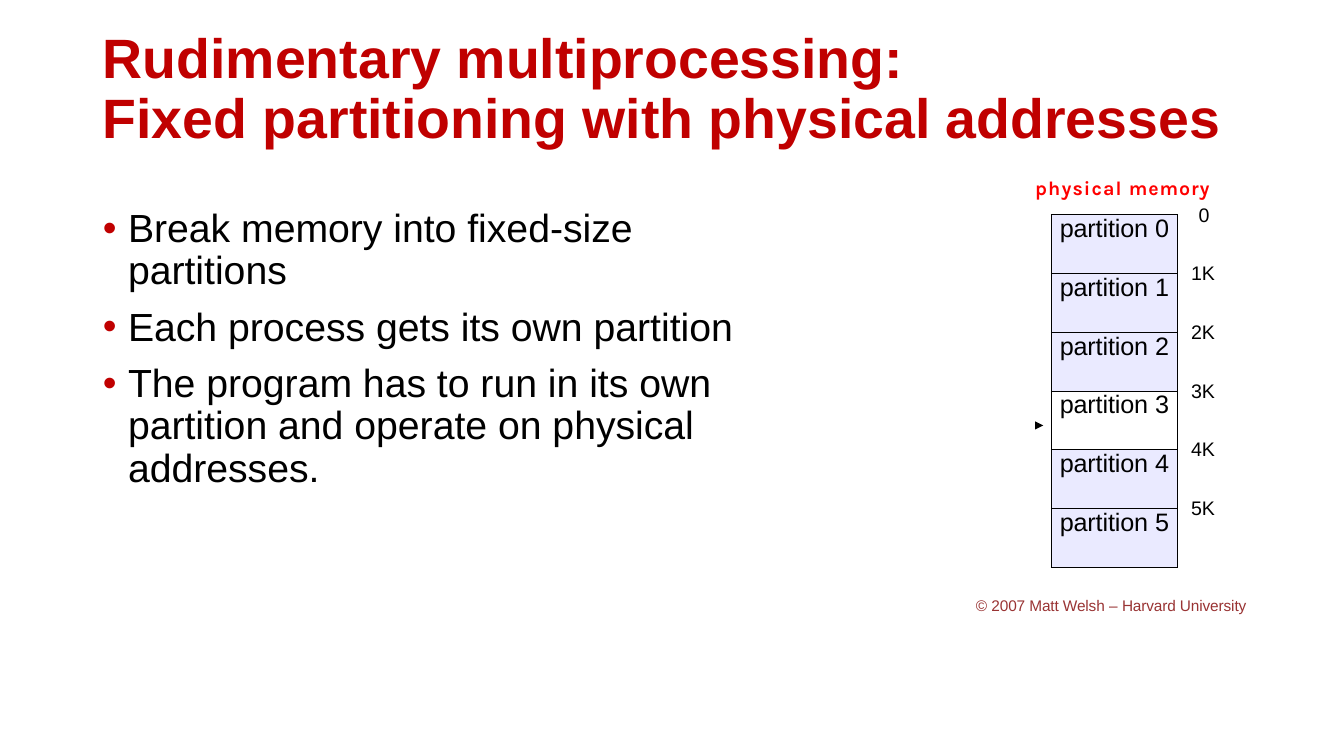
"""Build the slide on fixed partitioning of physical memory."""
from lxml import etree
from pptx import Presentation
from pptx.dml.color import RGBColor
from pptx.enum.text import MSO_ANCHOR, MSO_AUTO_SIZE, PP_ALIGN
from pptx.oxml.ns import qn
from pptx.util import Pt

LEFT, CENTER, RIGHT = PP_ALIGN.LEFT, PP_ALIGN.CENTER, PP_ALIGN.RIGHT
TOP, MIDDLE = MSO_ANCHOR.TOP, MSO_ANCHOR.MIDDLE
NO_FIT, GROW = MSO_AUTO_SIZE.NONE, MSO_AUTO_SIZE.SHAPE_TO_FIT_TEXT

COLORS = {"title": "C00000", "text": "000000", "heading": "FF0000",
          "credit": "993333", "partition": "EAEAFF"}

TITLE = "Rudimentary multiprocessing: \vFixed partitioning with physical addresses"
BULLETS = [
    "Break memory into fixed-size partitions",
    "Each process gets its own partition",
    "The program has to run in its own partition and operate on physical addresses.",
]
PARTITIONS = 6
RUNNING = 3
HEADING = [("physical ", 0.8), ("memory", 0.6)]
FIRST_ADDRESS = [("0", 0.1)]
CREDIT = [("© ", 0), ("2007 Matt Welsh ", -0.1), ("– ", 0), ("Harvard University", -0.1)]

TITLE_BOX = (66.24, 12.24, 858.24, 104.4)
BODY_BOX = (66.24, 145.44, 514.08, 362.88)
HEADING_BOX = (729.4, 125.3, 134.6, 37.4)
CREDIT_BOX = (697, 425.5, 198, 13.7)
TABLE_LEFT, TABLE_TOP, TABLE_WIDTH, ROW_HEIGHT = 751, 153.4, 90, 42
ADDRESS_LEFT, ADDRESS_RISE, ADDRESS_WIDTH, ADDRESS_HEIGHT = 850.8, 9, 22, 18
MARKER_LEFT, MARKER_TOP, MARKER_SIZE = 739.4, 301, 5.8

TITLE_FONT = {"name": "Arial", "size": Pt(39.6), "bold": True}
BODY_FONT = {"name": "Arial", "size": Pt(28)}
PARTITION_FONT = {"name": "Arial", "size": Pt(18)}
ADDRESS_FONT = {"name": "Arial", "size": Pt(14), "bold": False}
HEADING_FONT = {"name": "Karla", "size": Pt(14), "bold": True}
CREDIT_FONT = {"name": "Arial", "size": Pt(11)}
TITLE_FORMAT = {"alignment": LEFT, "line_spacing": 0.9}
BODY_FORMAT = {"alignment": LEFT, "line_spacing": 0.9, "space_before": Pt(10)}
NO_INSETS = {"margin_left": 0, "margin_right": 0, "margin_top": 0, "margin_bottom": 0}


def apply_format(target, values):
    for name, value in values.items():
        setattr(target, name, value)


def place(shape, box):
    apply_format(shape, dict(zip(("left", "top", "width", "height"), map(Pt, box))))


def add_runs(paragraph, runs, font, color, layout):
    apply_format(paragraph, layout)
    for text, spacing in runs:
        run = paragraph.add_run()
        run.text = text
        apply_format(run.font, font)
        run.font.color.rgb = RGBColor.from_string(COLORS[color])
        if spacing:
            run.font._element.set("spc", str(round(spacing * 100)))


def add_label(slide, box, runs, font, color, alignment=LEFT):
    frame = slide.shapes.add_textbox(*map(Pt, box)).text_frame
    apply_format(frame, {**NO_INSETS, "word_wrap": True, "auto_size": GROW})
    add_runs(frame.paragraphs[0], runs, font, color, {"alignment": alignment})
    return frame


def add_title(slide):
    title = slide.shapes.title
    place(title, TITLE_BOX)
    frame = title.text_frame
    apply_format(frame, {"vertical_anchor": MIDDLE, "auto_size": NO_FIT})
    frame.text = TITLE
    paragraph = frame.paragraphs[0]
    apply_format(paragraph, TITLE_FORMAT)
    for run in paragraph.runs:
        apply_format(run.font, TITLE_FONT)
        run.font.color.rgb = RGBColor.from_string(COLORS["title"])


def add_bullets(slide):
    body = slide.placeholders[1]
    place(body, BODY_BOX)
    frame = body.text_frame
    apply_format(frame, {"vertical_anchor": TOP, "auto_size": NO_FIT})
    for index, bullet in enumerate(BULLETS):
        paragraph = frame.add_paragraph() if index else frame.paragraphs[0]
        add_runs(paragraph, [(bullet, 0)], BODY_FONT, "text", BODY_FORMAT)
        properties = paragraph._p.get_or_add_pPr()
        properties.set("marL", str(Pt(18)))
        properties.set("indent", str(Pt(-18)))
        bullet_color = etree.SubElement(properties, qn("a:buClr"))
        etree.SubElement(bullet_color, qn("a:srgbClr"), val=COLORS["title"])
        etree.SubElement(properties, qn("a:buFont"), typeface="Arial")
        etree.SubElement(properties, qn("a:buChar"), char="•")


def add_borders(cell):
    properties = cell._tc.get_or_add_tcPr()
    for index, side in enumerate(("a:lnL", "a:lnR", "a:lnT", "a:lnB")):
        line = etree.Element(qn(side), w=str(Pt(1)))
        fill = etree.SubElement(line, qn("a:solidFill"))
        etree.SubElement(fill, qn("a:srgbClr"), val=COLORS["text"])
        properties.insert(index, line)


def add_memory(slide):
    size = (TABLE_LEFT, TABLE_TOP, TABLE_WIDTH, ROW_HEIGHT * PARTITIONS)
    table = slide.shapes.add_table(PARTITIONS, 1, *map(Pt, size)).table
    apply_format(table, {"first_row": False, "horz_banding": False})
    for number in range(PARTITIONS):
        table.rows[number].height = Pt(ROW_HEIGHT)
        cell = table.cell(number, 0)
        apply_format(cell, NO_INSETS)
        add_runs(cell.text_frame.paragraphs[0], [("partition ", -0.1), (str(number), 0)],
                 PARTITION_FONT, "text", {"alignment": CENTER, "space_before": Pt(8.9)})
        if number == RUNNING:
            cell.fill.background()
        else:
            cell.fill.solid()
            cell.fill.fore_color.rgb = RGBColor.from_string(COLORS["partition"])
        add_borders(cell)


def add_addresses(slide):
    heading = add_label(slide, HEADING_BOX, HEADING, HEADING_FONT, "heading", RIGHT)
    add_runs(heading.add_paragraph(), FIRST_ADDRESS, ADDRESS_FONT, "text",
             {"alignment": RIGHT, "space_before": Pt(2.6)})
    for number in range(1, PARTITIONS):
        top = TABLE_TOP + number * ROW_HEIGHT - ADDRESS_RISE
        add_label(slide, (ADDRESS_LEFT, top, ADDRESS_WIDTH, ADDRESS_HEIGHT),
                  [(str(number), -0.1), ("K", 0.2)], ADDRESS_FONT, "text")


def add_marker(slide):
    left, top, size = Pt(MARKER_LEFT), Pt(MARKER_TOP), Pt(MARKER_SIZE)
    builder = slide.shapes.build_freeform(left, top)
    builder.add_line_segments([(left, top + size), (left + size, top + size // 2)], close=True)
    marker = builder.convert_to_shape()
    marker.shadow.inherit = False
    marker.fill.solid()
    marker.fill.fore_color.rgb = RGBColor.from_string(COLORS["text"])
    marker.line.fill.background()


def main():
    presentation = Presentation()
    apply_format(presentation, {"slide_width": Pt(960), "slide_height": Pt(540)})
    slide = presentation.slides.add_slide(presentation.slide_layouts[1])
    add_title(slide)
    add_bullets(slide)
    add_memory(slide)
    add_addresses(slide)
    add_marker(slide)
    add_label(slide, CREDIT_BOX, CREDIT, CREDIT_FONT, "credit")
    presentation.save("out.pptx")


if __name__ == "__main__":
    main()
